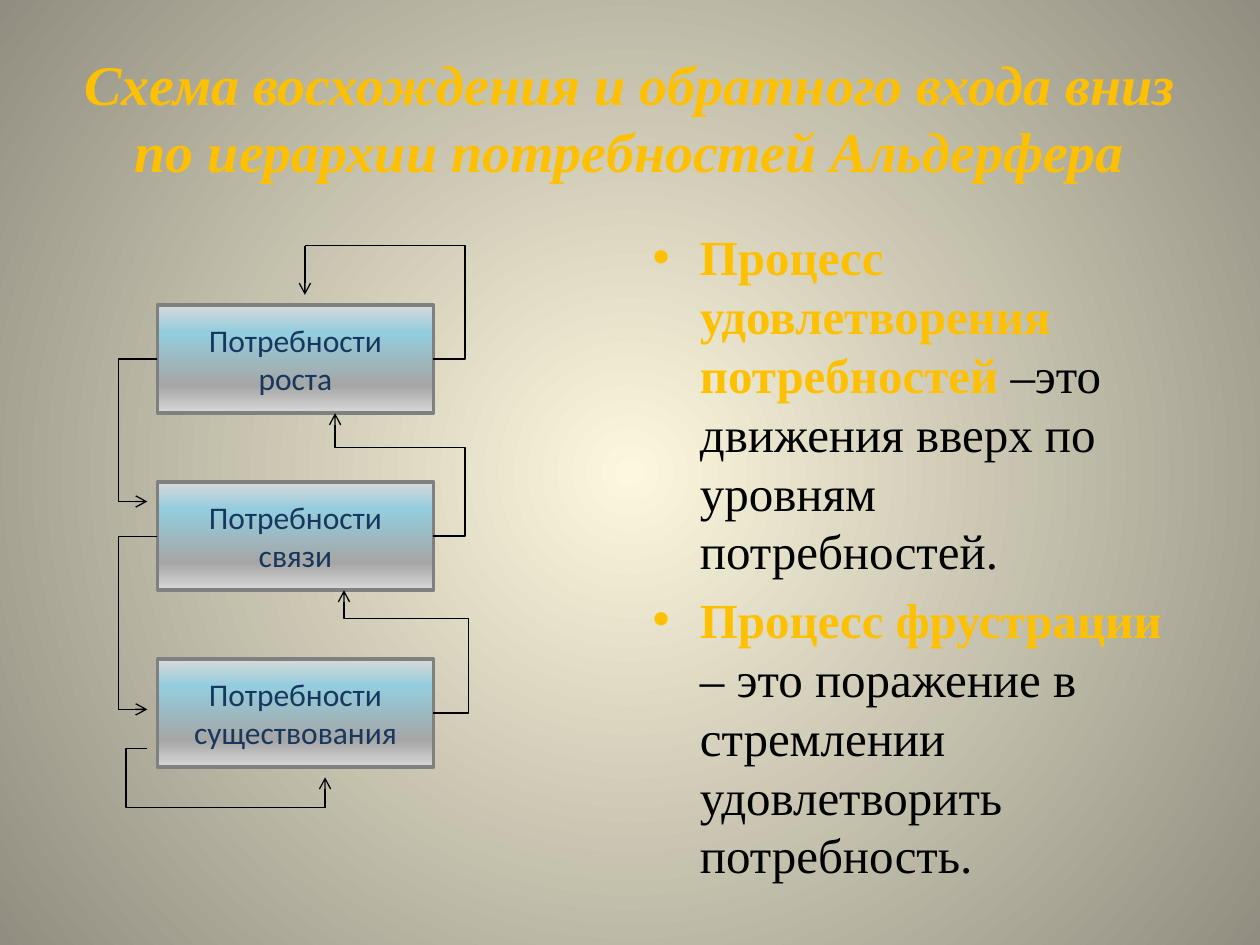
import pptx
import pptx.util
from lxml import etree
from pptx.dml.color import RGBColor
from pptx.enum.shapes import MSO_CONNECTOR, MSO_SHAPE
from pptx.enum.text import MSO_ANCHOR, PP_ALIGN
from pptx.oxml.ns import qn
from pptx.util import Inches, Pt

GOLD = RGBColor(0xFF, 0xC0, 0x00)
BLACK = RGBColor(0x00, 0x00, 0x00)
NAVY = RGBColor(0x17, 0x37, 0x5E)
GRAY = RGBColor(0x80, 0x80, 0x80)
CREAM = RGBColor(0xFC, 0xF7, 0xDD)
TAUPE = RGBColor(0x91, 0x8E, 0x81)
SILVER = RGBColor(0xD9, 0xD9, 0xD9)
STEEL = RGBColor(0xA6, 0xA6, 0xA6)
AQUA = RGBColor(0x93, 0xCD, 0xDD)

SERIF = "Times New Roman"
TITLE = "Схема восхождения и обратного входа вниз по иерархии потребностей Альдерфера"
PROCESSES = [
    ("Процесс удовлетворения потребностей ",
     "–это движения вверх по уровням потребностей."),
    ("Процесс фрустрации ",
     "– это поражение в стремлении удовлетворить потребность."),
]
NEEDS = ["Потребности роста", "Потребности связи", "Потребности существования"]

BOX_LEFT, BOX_TOP, BOX_WIDTH, BOX_HEIGHT, BOX_STEP = 1.25, 2.42, 2.19, 0.86, 1.405
BOX_RIGHT = BOX_LEFT + BOX_WIDTH
TOPS = [BOX_TOP + BOX_STEP * level for level in range(len(NEEDS))]
MIDDLES = [top + BOX_HEIGHT / 2 for top in TOPS]
BOTTOMS = [top + BOX_HEIGHT for top in TOPS]
LOOP_X = 0.94

# start, x of the first bend, y of the second bend (None: none of its own), end, arrow
ROUTES = [
    ((BOX_RIGHT, MIDDLES[2]), 3.72, 4.91, (2.73, BOTTOMS[1]), True),
    ((BOX_RIGHT, MIDDLES[1]), 3.69, 3.55, (2.66, BOTTOMS[0]), True),
    ((BOX_RIGHT, MIDDLES[0]), 3.69, None, (2.42, 1.95), False),
    ((1.17, 5.94), 1, None, (2.58, 6.41), False),
    ((BOX_LEFT, MIDDLES[1]), LOOP_X, None, (LOOP_X, 5.63), False),
    ((BOX_LEFT, MIDDLES[0]), LOOP_X, None, (LOOP_X, 3.98), False),
]
ARROWS = [
    ((2.42, 1.95), (2.42, 2.34)),
    ((2.58, 6.41), (2.58, 6.17)),
    ((LOOP_X, 5.63), (1.17, 5.63)),
    ((LOOP_X, 3.98), (1.17, 3.98)),
]


def set_gradient(owner, fill, stops, angle=None):
    """Fill with (percent, colour) stops: linear at angle, or circular from the centre."""
    fill.gradient()
    gradient = next(owner.iter(qn("a:gradFill")))
    for child in list(gradient):
        gradient.remove(child)
    stop_list = etree.SubElement(gradient, qn("a:gsLst"))
    for percent, color in stops:
        stop = etree.SubElement(stop_list, qn("a:gs"), pos=str(percent * 1000))
        etree.SubElement(stop, qn("a:srgbClr"), val=str(color))
    if angle is None:
        circle = etree.SubElement(gradient, qn("a:path"), path="circle")
        etree.SubElement(circle, qn("a:fillToRect"),
                         {side: "50000" for side in "ltrb"})
    else:
        etree.SubElement(gradient, qn("a:lin"), ang=str(angle * 60000), scaled="0")


def place(shape, left, top, width, height):
    shape.left, shape.top = Inches(left), Inches(top)
    shape.width, shape.height = Inches(width), Inches(height)


def style_font(run, name, size, color, bold=False, italic=False):
    run.font.name, run.font.size = name, Pt(size)
    run.font.color.rgb = color
    run.font.bold, run.font.italic = bold, italic


def add_line(slide, kind, start, end, arrow):
    connector = slide.shapes.add_connector(kind, *map(Inches, start + end))
    connector.line.color.rgb = BLACK
    connector.line.width = Pt(0.75)
    properties = connector.element.spPr
    if arrow:
        etree.SubElement(properties.find(qn("a:ln")), qn("a:tailEnd"), type="arrow")
    etree.SubElement(properties, qn("a:effectLst"))
    return connector


def add_route(slide, start, bend_x, bend_y, end, arrow):
    """Draw an elbow connector; its bends become shares of its width and height."""
    connector = add_line(slide, MSO_CONNECTOR.ELBOW, start, end, arrow)
    shares = []
    if bend_x != end[0]:
        shares.append((bend_x - start[0]) / (end[0] - start[0]))
    if bend_y is not None:
        shares.append((bend_y - start[1]) / (end[1] - start[1]))
    geometry = connector.element.spPr.find(qn("a:prstGeom"))
    geometry.set("prst", f"bentConnector{len(shares) + 2}")
    guides = geometry.find(qn("a:avLst"))
    for number, share in enumerate(shares, 1):
        etree.SubElement(guides, qn("a:gd"), name=f"adj{number}",
                         fmla=f"val {round(share * 100000)}")


def add_need(slide, text, top):
    box = slide.shapes.add_shape(
        MSO_SHAPE.RECTANGLE,
        *map(Inches, (BOX_LEFT, top, BOX_WIDTH, BOX_HEIGHT)))
    box.shadow.inherit = False
    set_gradient(box.element.spPr, box.fill,
                 [(0, SILVER), (25, STEEL), (75, AQUA), (100, SILVER)], angle=270)
    box.line.color.rgb = GRAY
    box.line.width = Pt(2)
    frame = box.text_frame
    frame.text = text
    frame.word_wrap = True
    frame.vertical_anchor = MSO_ANCHOR.MIDDLE
    frame.paragraphs[0].alignment = PP_ALIGN.CENTER
    style_font(frame.paragraphs[0].runs[0], "Calibri", 18, NAVY)


def main():
    presentation = pptx.Presentation()
    presentation.slide_width, presentation.slide_height = Inches(10), Inches(7.5)
    slide = presentation.slides.add_slide(presentation.slide_layouts[1])
    set_gradient(slide.element, slide.background.fill, [(0, CREAM), (100, TAUPE)])

    title, body = slide.placeholders
    place(title, 0.5, 0.3, 9, 1.25)
    title.text_frame.text = TITLE
    style_font(title.text_frame.paragraphs[0].runs[0], SERIF, 32, GOLD, True, True)

    place(body, 5.08, 1.75, 4.42, 4.95)
    body.text_frame.text = "\n".join(term + meaning for term, meaning in PROCESSES)
    for paragraph, (term, meaning) in zip(body.text_frame.paragraphs, PROCESSES):
        paragraph.runs[0].text = term
        paragraph.add_run().text = meaning
        style_font(paragraph.runs[0], SERIF, 28, GOLD, bold=True)
        style_font(paragraph.runs[1], SERIF, 28, BLACK)

    for text, top in zip(NEEDS, TOPS):
        add_need(slide, text, top)
    for route in ROUTES:
        add_route(slide, *route)
    for start, end in ARROWS:
        add_line(slide, MSO_CONNECTOR.STRAIGHT, start, end, arrow=True)

    presentation.save("out.pptx")


if __name__ == "__main__":
    main()
